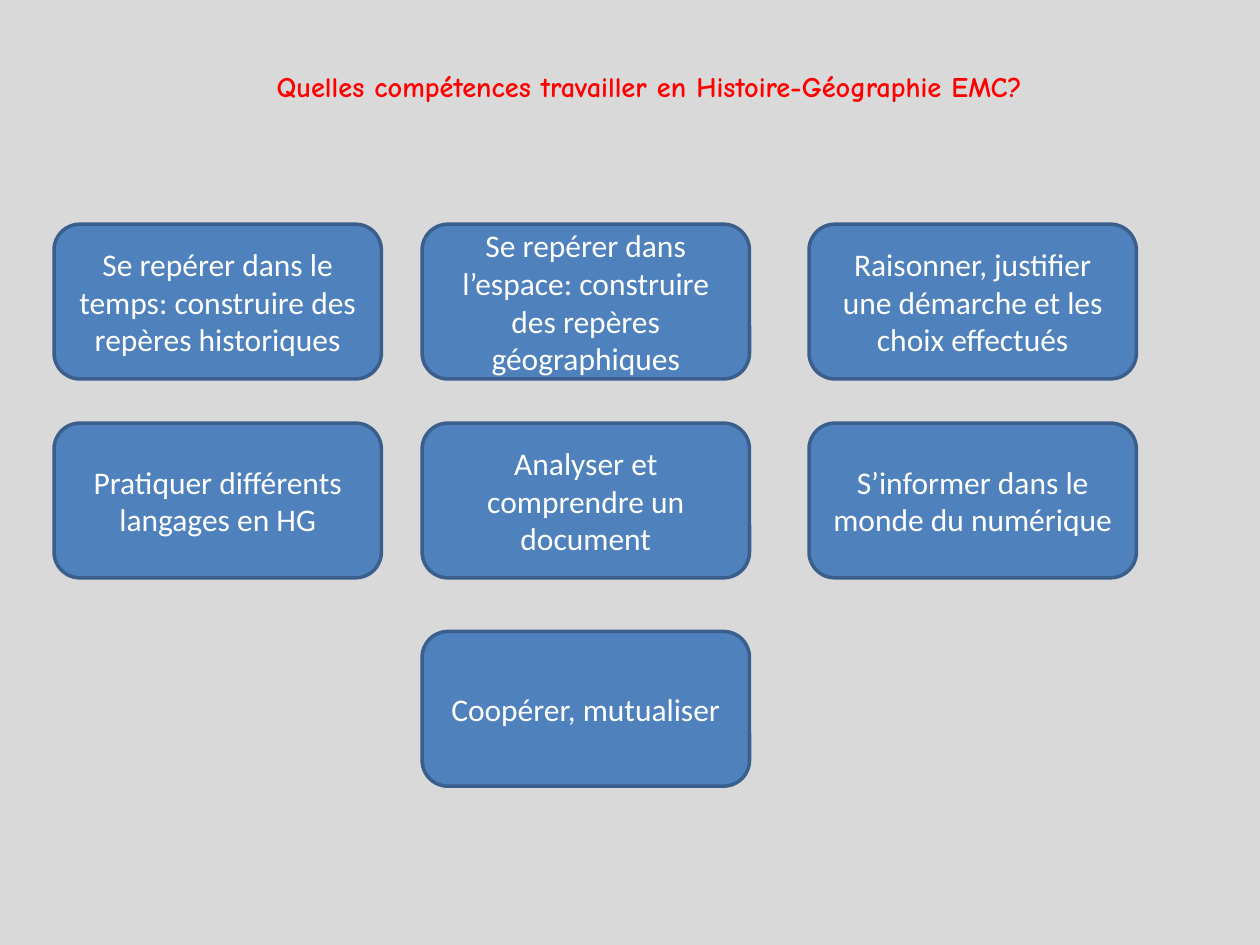
from pptx import Presentation
from pptx.dml.color import RGBColor
from pptx.enum.shapes import MSO_SHAPE as Shape
from pptx.enum.text import MSO_ANCHOR as Anchor, MSO_AUTO_SIZE as AutoSize, PP_ALIGN as Align
from pptx.util import Cm, Pt

GREY = RGBColor(0xD9, 0xD9, 0xD9)
RED = RGBColor(0xFF, 0x00, 0x00)
BLUE = RGBColor(0x4F, 0x81, 0xBD)
DARK_BLUE = RGBColor(0x3A, 0x5F, 0x8C)
WHITE = RGBColor(0xFF, 0xFF, 0xFF)

# Page and background
deck = Presentation()
deck.slide_width, deck.slide_height = Cm(25.4), Cm(19.05)
page = deck.slides.add_slide(deck.slide_layouts[5])
page.background.fill.solid()
page.background.fill.fore_color.rgb = GREY

# Title
title = page.shapes.title
title.left, title.top, title.width, title.height = Cm(2.24), Cm(1.35), Cm(21.89), Cm(2.39)
frame = title.text_frame
frame.text = "Quelles compétences travailler en Histoire-Géographie EMC?"
frame.auto_size = AutoSize.NONE
frame.vertical_anchor = Anchor.TOP
frame.margin_top = Cm(0.05)
frame.margin_right = Cm(0.45)
para = frame.paragraphs[0]
para.alignment = Align.CENTER
para.font.name = "Comic Neue"
para.font.size = Pt(16.2)
para.font.bold = True
para.font.color.rgb = RED

# Skill boxes: one list per row, one entry per column
COLUMNS = [1.09, 8.51, 16.31]
ROWS = [4.52, 8.53, 12.73]
SKILLS = [
    ["Se repérer dans le temps: construire des repères historiques",
     "Se repérer dans l’espace: construire des repères géographiques",
     "Raisonner, justifier une démarche et les choix effectués"],
    ["Pratiquer différents langages en HG",
     "Analyser et comprendre un document",
     "S’informer dans le monde du numérique"],
    [None, "Coopérer, mutualiser", None],
]
for top, skills in zip(ROWS, SKILLS):
    for left, skill in zip(COLUMNS, skills):
        if skill is None:
            continue
        box = page.shapes.add_shape(Shape.ROUNDED_RECTANGLE, Cm(left), Cm(top), Cm(6.6), Cm(3.12))
        box.shadow.inherit = False
        box.fill.solid()
        box.fill.fore_color.rgb = BLUE
        box.line.color.rgb = DARK_BLUE
        box.line.width = Pt(2)
        frame = box.text_frame
        frame.text = skill
        frame.word_wrap = True
        frame.vertical_anchor = Anchor.MIDDLE
        para = frame.paragraphs[0]
        para.alignment = Align.CENTER
        para.font.name = "Calibri"
        para.font.size = Pt(18)
        para.font.color.rgb = WHITE

deck.save("out.pptx")
